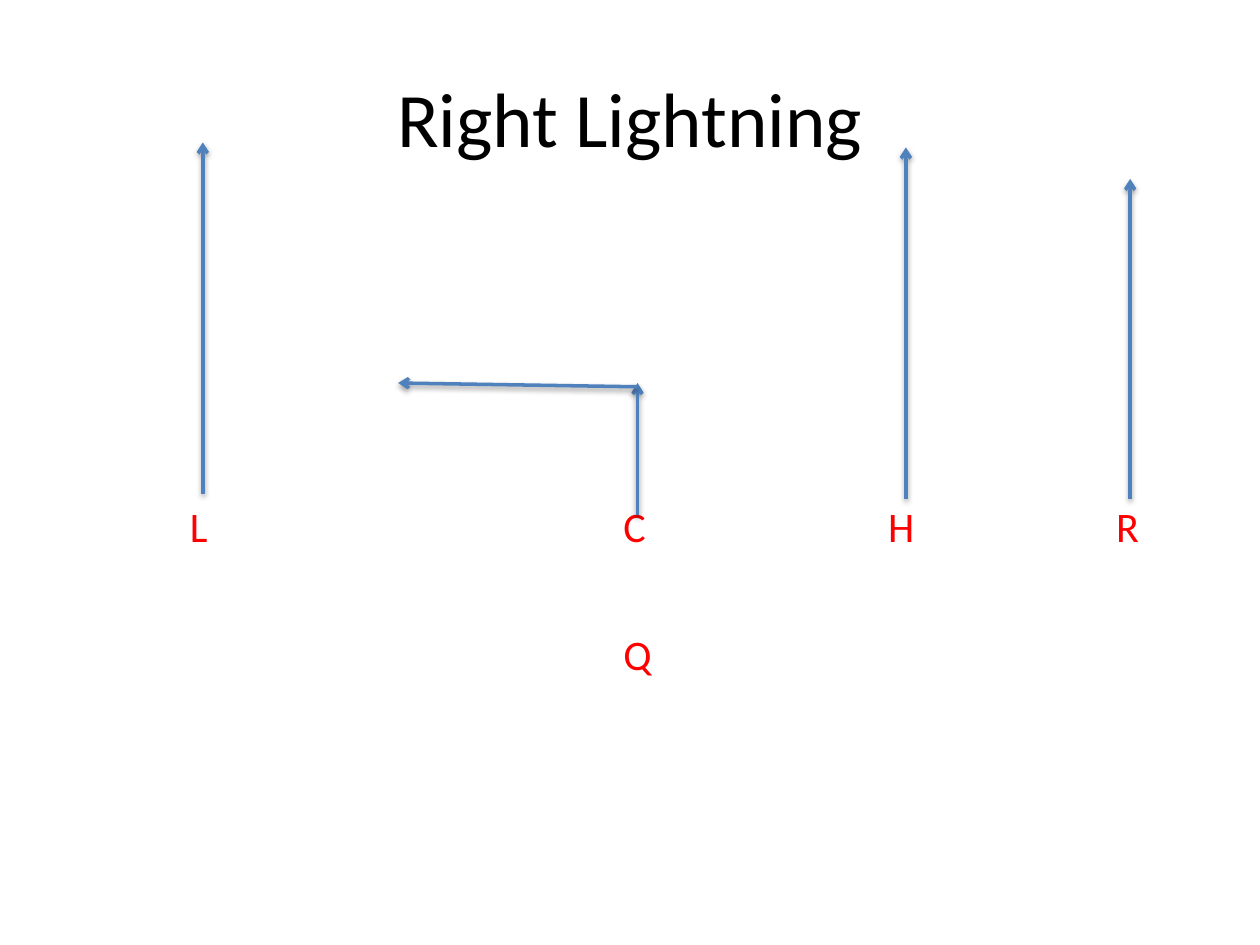
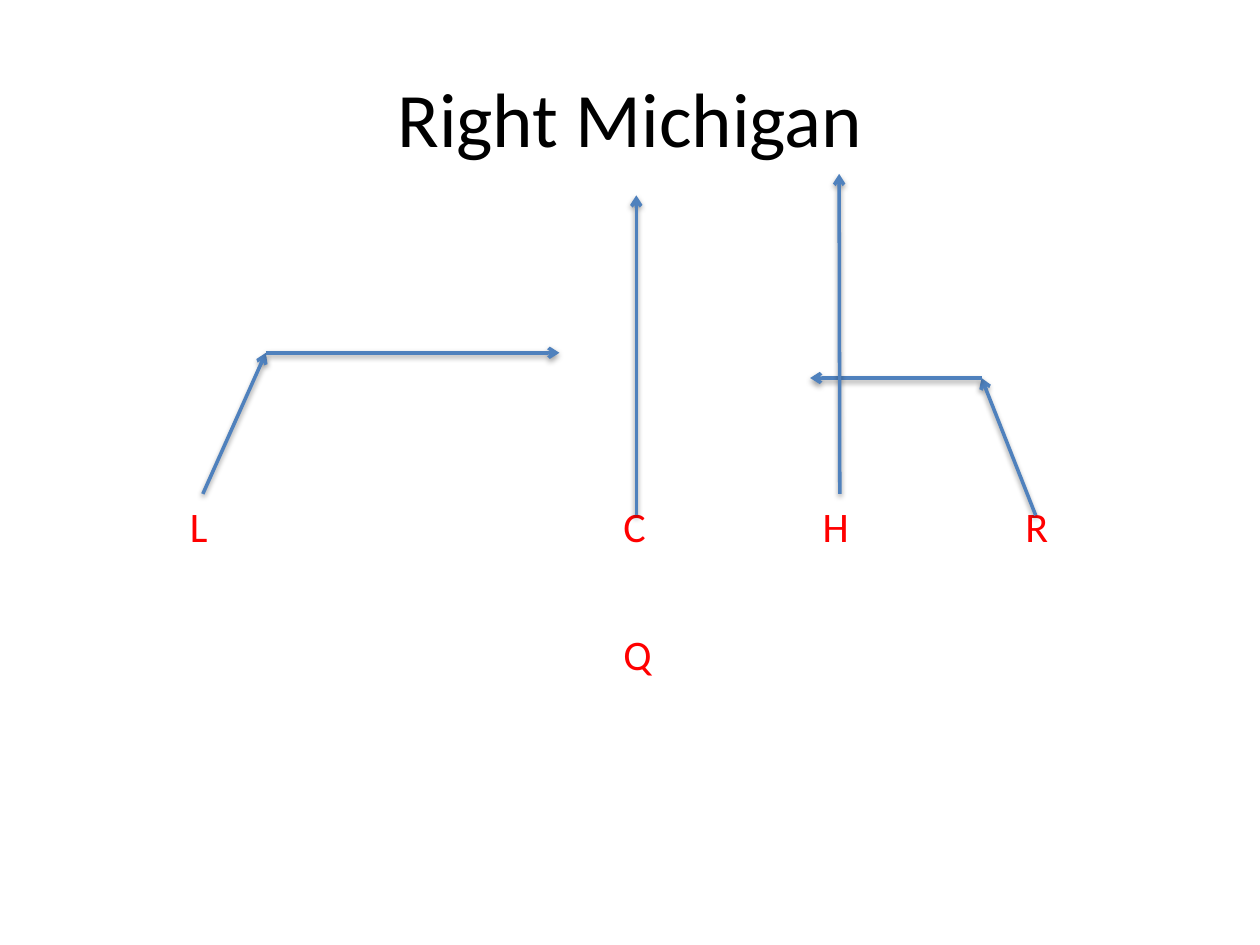
from lxml.etree import SubElement
from pptx import Presentation
from pptx.dml.color import RGBColor
from pptx.enum.shapes import MSO_CONNECTOR
from pptx.enum.text import MSO_ANCHOR, MSO_AUTO_SIZE, PP_ALIGN
from pptx.oxml import parse_xml
from pptx.oxml.ns import nsdecls, qn
from pptx.util import Inches, Pt

# Shared style
FONT = "Calibri"
ROUTE_COLOR = "4F81BD"
LABEL_WIDTH, LABEL_HEIGHT = 0.47, 0.5
LINE_TOP, QUARTERBACK_TOP = 3.92, 4.94
SHADOW = (
    f'<a:effectLst {nsdecls("a")}>'
    '<a:outerShdw blurRad="40000" dist="20000" dir="5400000" rotWithShape="0">'
    '<a:srgbClr val="000000"><a:alpha val="38000"/></a:srgbClr>'
    "</a:outerShdw></a:effectLst>"
)

# Players: letter -> (left, top). Routes: each leg runs from a point, or from
# the top of a player's label, to a point.
SHARED_PLAYERS = {
    "L": (1.41, LINE_TOP),
    "Q": (4.85, QUARTERBACK_TOP),
    "C": (4.85, LINE_TOP),
}
PLAYS = [
    {
        "title": "Right Lightning",
        "players": {"R": (8.76, LINE_TOP), "H": (6.95, LINE_TOP)},
        "routes": [
            ((1.61, 3.92), (1.61, 1.13)),
            ((5.06, 4.09), (5.06, 3.04)),
            ((8.97, 3.96), (8.97, 1.42)),
            ((7.19, 3.96), (7.19, 1.17)),
            ((5.06, 3.07), (3.16, 3.04)),
        ],
    },
    {
        "title": "Right Michigan",
        "players": {"R": (8.04, LINE_TOP), "H": (6.43, LINE_TOP)},
        "routes": [
            ((1.61, 3.92), (2.11, 2.8)),
            ((5.05, 4.09), (5.05, 1.55)),
            ((2.11, 2.8), (4.44, 2.8)),
            ((8.22, 4.09), (7.79, 3)),
            ((7.79, 3), (6.43, 3)),
            ("H", (6.66, 1.38)),
        ],
    },
]


def color(hex_value):
    return RGBColor.from_string(hex_value)


def write_text(shape, text, hex_value, size, alignment):
    paragraph = shape.text_frame.paragraphs[0]
    paragraph.alignment = alignment
    run = paragraph.add_run()
    run.text = text
    for name, value in {"name": FONT, "size": Pt(size)}.items():
        setattr(run.font, name, value)
    run.font.color.rgb = color(hex_value)


presentation = Presentation()
presentation.slide_width = Inches(10)
presentation.slide_height = Inches(7.5)

for play in PLAYS:
    slide = presentation.slides.add_slide(presentation.slide_layouts[5])

    # Title
    title = slide.shapes.title
    frame = {"left": 0.5, "top": 0.3, "width": 9, "height": 1.25}
    for name, value in frame.items():
        setattr(title, name, Inches(value))
    title.text_frame.vertical_anchor = MSO_ANCHOR.MIDDLE
    write_text(title, play["title"], "000000", 44, PP_ALIGN.CENTER)

    # Players
    labels = {}
    for letter, (left, top) in (SHARED_PLAYERS | play["players"]).items():
        label = slide.shapes.add_textbox(
            Inches(left), Inches(top), Inches(LABEL_WIDTH), Inches(LABEL_HEIGHT)
        )
        label.text_frame.word_wrap = True
        label.text_frame.auto_size = MSO_AUTO_SIZE.SHAPE_TO_FIT_TEXT
        write_text(label, letter, "FF0000", 24, PP_ALIGN.LEFT)
        labels[letter] = label

    # Routes
    for start, end in play["routes"]:
        begin = end if start in labels else start
        route = slide.shapes.add_connector(
            MSO_CONNECTOR.STRAIGHT, *[Inches(value) for value in (*begin, *end)]
        )
        if start in labels:
            route.begin_connect(labels[start], 0)
        route.line.color.rgb = color(ROUTE_COLOR)
        route.line.width = Pt(2)
        SubElement(route.line._get_or_add_ln(), qn("a:tailEnd"), type="arrow")
        route._element.spPr.append(parse_xml(SHADOW))

presentation.save("out.pptx")
